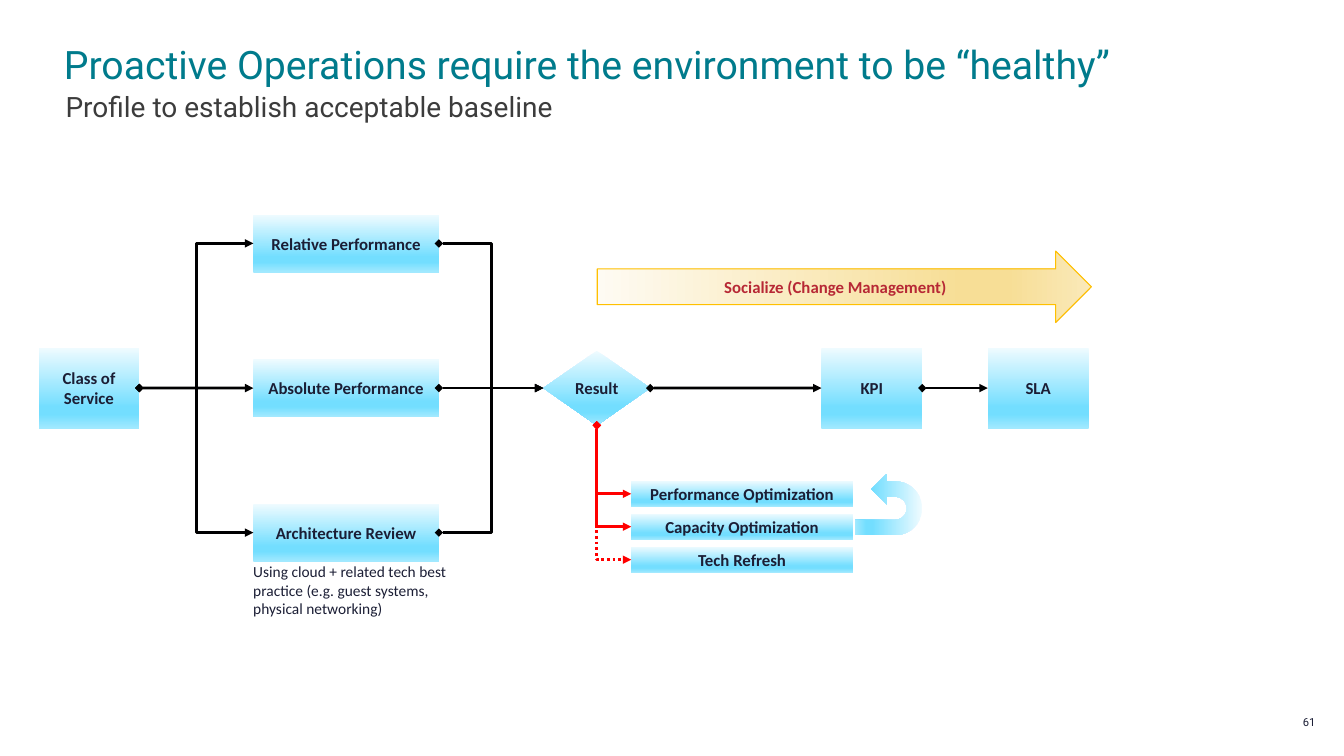
from pptx import Presentation
from pptx.dml.color import RGBColor
from pptx.enum.dml import MSO_LINE
from pptx.enum.shapes import MSO_CONNECTOR, MSO_SHAPE
from pptx.enum.text import MSO_ANCHOR, MSO_AUTO_SIZE, PP_ALIGN
from pptx.oxml import parse_xml
from pptx.oxml.ns import nsdecls, qn
from pptx.util import Pt

HEX = {
    "ink": "1B1E35", "teal": "007B8C", "gray": "3C3C3C", "wine": "B72835",
    "black": "000001", "red": "FF0000", "gold": "FFC000",
}
BLUE = {0: "EFFBFF", 74: "73DEFF", 83: "73DEFF", 100: "A2E9FF"}
SAND = {0: "FEFBF3", 74: "F7DE96", 83: "F7DE96", 100: "FAE9B9"}
MID = 277.2

deck = Presentation()
deck.slide_width, deck.slide_height = Pt(960), Pt(540)
slide = deck.slides.add_slide(deck.slide_layouts[6])
shapes = slide.shapes


def write(shape, words, color, frame, para, font):
    body = shape.text_frame
    line = body.paragraphs[0]
    line.text = words
    for part, values in ((body, frame), (line, para), (line.font, font)):
        for name, value in values.items():
            setattr(part, name, value)
    line.font.color.rgb = RGBColor.from_string(HEX[color])


def draw(kind, left, top, width, height, words="", color="ink", stops=BLUE, angle=90):
    shape = shapes.add_shape(kind, Pt(left), Pt(top), Pt(width), Pt(height))
    shape.shadow.inherit = False
    marks = "".join(
        f'<a:gs pos="{pos * 1000}"><a:srgbClr val="{tint}"/></a:gs>'
        for pos, tint in stops.items()
    )
    grad = parse_xml(
        f'<a:gradFill {nsdecls("a")} rotWithShape="1"><a:gsLst>{marks}</a:gsLst>'
        f'<a:lin ang="{angle * 60000}" scaled="0"/></a:gradFill>'
    )
    shape._element.spPr.find(qn("a:prstGeom")).addnext(grad)
    shape.line.fill.background()
    if words:
        write(
            shape, words, color,
            {"word_wrap": True, "vertical_anchor": MSO_ANCHOR.MIDDLE},
            {"alignment": PP_ALIGN.CENTER, "space_after": Pt(6)},
            {"name": "Calibri", "size": Pt(12), "bold": True},
        )
    return shape


flush = {"margin_left": 0, "margin_top": 0, "margin_right": 0, "margin_bottom": 0}
texts = [
    ("Proactive Operations require the environment to be “healthy”", "teal",
     (45.6, 32.4, 866, 30.2), {**flush, "vertical_anchor": MSO_ANCHOR.BOTTOM},
     {"line_spacing": 0.9}, ("Roboto", 28)),
    ("Profile to establish acceptable baseline", "gray",
     (46.8, 64.1, 863, 19.4), flush, {}, ("Roboto", 20)),
    ("Using cloud + related tech best practice (e.g. guest systems, physical networking)",
     "ink", (173.8, 398.2, 171.4, 47.5),
     {"auto_size": MSO_AUTO_SIZE.SHAPE_TO_FIT_TEXT},
     {"space_after": Pt(6)}, ("Calibri", 11)),
    ("61", "ink", (905, 509, 34.6, 14.4),
     {**flush, "vertical_anchor": MSO_ANCHOR.MIDDLE},
     {"alignment": PP_ALIGN.RIGHT, "line_spacing": 0.9}, ("Roboto", 8)),
]
for words, color, place, frame, para, (face, size) in texts:
    label = shapes.add_textbox(*map(Pt, place))
    write(label, words, color, {"word_wrap": True, **frame}, para,
          {"name": face, "size": Pt(size)})

result = draw(MSO_SHAPE.DIAMOND, 388.1, MID - 26.6, 76.4, 53.2, "Result")
for name, value in {**flush, "margin_top": Pt(3.6), "margin_bottom": Pt(3.6)}.items():
    setattr(result.text_frame, name, value)

service, kpi, sla = [
    draw(MSO_SHAPE.RECTANGLE, left, MID - 28.8, 72, 57.6, words)
    for left, words in ((27.6, "Class of Service"), (586.8, "KPI"), (705.6, "SLA"))
]
checks = [
    draw(MSO_SHAPE.RECTANGLE, 181, MID - 20.5 + 103.3 * step, 132.5, 41, words)
    for step, words in (
        (-1, "Relative Performance"),
        (0, "Absolute Performance"),
        (1, "Architecture Review"),
    )
]
fixes = [
    draw(MSO_SHAPE.RECTANGLE, 450.9, 343.4 + 23.5 * row, 158.4, 18.7, words)
    for row, words in enumerate(
        ("Performance Optimization", "Capacity Optimization", "Tech Refresh")
    )
]
social = draw(MSO_SHAPE.RIGHT_ARROW, 426.6, 179.3, 353, 51.1,
              "Socialize (Change Management)", "wine", SAND, 0)
social.line.color.rgb = RGBColor.from_string(HEX["gold"])
social.line.width = Pt(0.75)
loop = draw(MSO_SHAPE.U_TURN_ARROW, 612.7, 336.2, 43.9, 48.2)
loop.rotation = 90
loop._element.spPr.xfrm.set("flipH", "1")

links = [(service, 3, check, "black") for check in checks]
links += [(check, 3, result, "black") for check in checks]
links += [(result, 3, kpi, "black"), (kpi, 3, sla, "black")]
links += [(result, 2, fix, "red") for fix in fixes]
for start, site, end, color in links:
    flat = start in (service, kpi, result) and end in (checks[1], kpi, sla)
    flat = flat or start is checks[1]
    kind = MSO_CONNECTOR.STRAIGHT if flat else MSO_CONNECTOR.ELBOW
    link = shapes.add_connector(kind, 0, 0, 0, 0)
    link.begin_connect(start, site)
    link.end_connect(end, 1)
    link.line.color.rgb = RGBColor.from_string(HEX[color])
    link.line.width = Pt(2)
    if end is fixes[2]:
        link.line.dash_style = MSO_LINE.ROUND_DOT
    prop = link._element.spPr
    if site == 2:
        wide, high = link.width, link.height
        link.left += (wide - high) // 2
        link.top += (high - wide) // 2
        link.width, link.height = high, wide
        prop.xfrm.set("rot", "16200000")
        prop.xfrm.set("flipH", "1")
        prop.find(qn("a:prstGeom")).set("prst", "bentConnector2")
    edge = prop.find(qn("a:ln"))
    for tag, tip in (("headEnd", "diamond"), ("tailEnd", "triangle")):
        edge.append(parse_xml(f'<a:{tag} {nsdecls("a")} type="{tip}"/>'))
    prop.append(parse_xml(f'<a:effectLst {nsdecls("a")}/>'))

deck.save("out.pptx")
